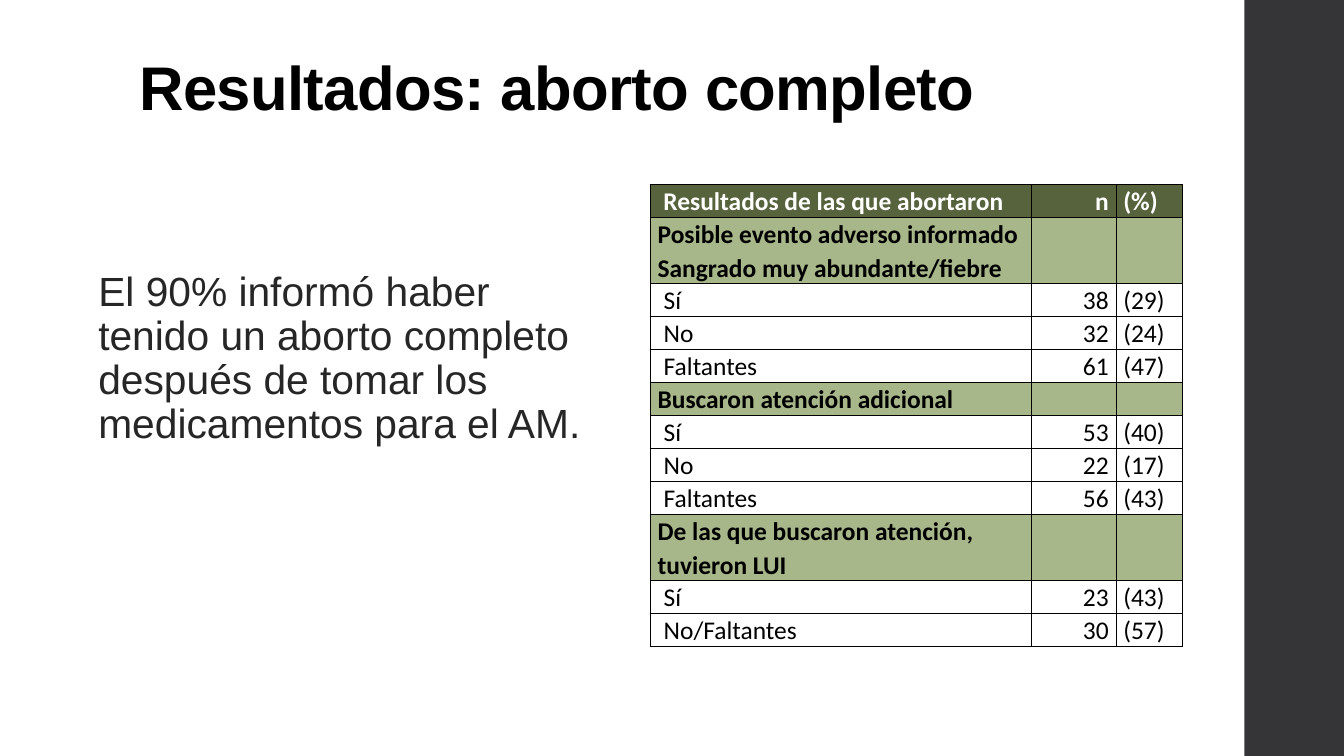
from lxml.etree import SubElement
from pptx import Presentation
from pptx.dml.color import RGBColor
from pptx.enum.shapes import MSO_SHAPE
from pptx.enum.text import MSO_ANCHOR, PP_ALIGN
from pptx.oxml.ns import qn
from pptx.util import Inches, Pt

WHITE = RGBColor(0xFF, 0xFF, 0xFF)
BLACK = RGBColor(0, 0, 0)
INK = RGBColor(0x26, 0x26, 0x26)
DARK = RGBColor(0x35, 0x35, 0x37)
OLIVE = RGBColor(0x56, 0x63, 0x3D)
SAGE = RGBColor(0xA7, 0xB7, 0x89)

TITLE = {"name": "Arial", "size": Pt(72.6), "bold": True}
BODY = {"name": "Arial", "size": Pt(48), "bold": False}
HEAD = {"name": "Calibri", "size": Pt(30), "bold": True}
CELL = {**HEAD, "bold": False}

# Rows with one entry are group headings
ROWS = [
    (" Resultados de las que abortaron", "n", "(%)"),
    ("Posible evento adverso informado Sangrado muy abundante/fiebre",),
    ("Sí", "38", "(29)"),
    ("No", "32", "(24)"),
    ("Faltantes", "61", "(47)"),
    ("Buscaron atención adicional",),
    ("Sí", "53", "(40)"),
    ("No", "22", "(17)"),
    ("Faltantes", "56", "(43)"),
    ("De las que buscaron atención, tuvieron LUI",),
    ("Sí", "23", "(43)"),
    ("No/Faltantes", "30", "(57)"),
]
WIDTHS = (6.24, 1.38, 1.08)
TALL = (1, 9)
LINE = 0.54


class Deck:
    def __init__(self, wide, high):
        self.show = Presentation()
        self.show.slide_width = Inches(wide)
        self.show.slide_height = Inches(high)
        self.slide = self.show.slides.add_slide(self.show.slide_layouts[6])

    def put(self, frame, text, style, color, lead, align=PP_ALIGN.LEFT, indent=0):
        para = frame.paragraphs[0]
        para.alignment = align
        para.line_spacing = lead
        if indent:
            props = para._p.get_or_add_pPr()
            props.set("marL", str(Inches(indent)))
            props.set("indent", "0")
        run = para.add_run()
        run.text = text
        for key, value in style.items():
            setattr(run.font, key, value)
        run.font.color.rgb = color
        return run

    def bar(self, box, color):
        shape = self.slide.shapes.add_shape(MSO_SHAPE.RECTANGLE, *map(Inches, box))
        shape.shadow.inherit = False
        shape.fill.solid()
        shape.fill.fore_color.rgb = color
        shape.line.fill.background()

    def text(self, box, text, style, color, anchor=MSO_ANCHOR.TOP, indent=0):
        frame = self.slide.shapes.add_textbox(*map(Inches, box)).text_frame
        frame.word_wrap = True
        frame.vertical_anchor = anchor
        return self.put(frame, text, style, color, 0.9, indent=indent)

    def edge(self, cell):
        props = cell._tc.get_or_add_tcPr()
        for side in ("lnL", "lnR", "lnT", "lnB"):
            line = SubElement(props, qn(f"a:{side}"), w=str(Pt(1)))
            fill = SubElement(line, qn("a:solidFill"))
            SubElement(fill, qn("a:srgbClr"), val=str(BLACK))

    def cell(self, cell, text, style, color, fill, align, indent):
        pads = {"margin_left": 0.12, "margin_right": 0.12,
                "margin_top": 0, "margin_bottom": 0}
        for key, value in pads.items():
            setattr(cell, key, Inches(value))
        self.edge(cell)
        if fill is None:
            cell.fill.background()
        else:
            cell.fill.solid()
            cell.fill.fore_color.rgb = fill
        if text:
            self.put(cell.text_frame, text, style, color, 1.07, align, indent)

    def table(self, left, top, rows):
        high = LINE * (len(rows) + len(TALL))
        grid = self.slide.shapes.add_table(
            len(rows), len(WIDTHS), Inches(left), Inches(top),
            Inches(sum(WIDTHS)), Inches(high)).table
        for col, width in zip(grid.columns, WIDTHS):
            col.width = Inches(width)
        for r, row in enumerate(rows):
            grid.rows[r].height = Inches(LINE * (2 if r in TALL else 1))
            if r == 0:
                style, color, fill = HEAD, WHITE, OLIVE
            elif len(row) == 1:
                style, color, fill = HEAD, BLACK, SAGE
            else:
                style, color, fill = CELL, BLACK, None
            for c in range(len(WIDTHS)):
                text = row[c] if c < len(row) else ""
                align = PP_ALIGN.RIGHT if c == 1 else PP_ALIGN.LEFT
                indent = 0.1 if fill is None and c == 0 else 0
                self.cell(grid.cell(r, c), text, style, color, fill, align, indent)


def main():
    deck = Deck(21.99, 12.37)

    # Side band
    deck.bar((20.36, 0, 1.63, 12.37), DARK)

    # Title and message
    title = deck.text((2.18, 0.63, 17.51, 1.44), "Resultados: aborto completo",
                      TITLE, BLACK, MSO_ANCHOR.BOTTOM)
    title._r.get_or_add_rPr().set("spc", "-80")
    deck.text((1.02, 4.39, 8.86, 4.04),
              "El 90% informó haber tenido un aborto completo después de tomar "
              "los medicamentos para el AM.", BODY, INK, indent=0.49)

    # Results table
    deck.table(10.64, 3.02, ROWS)

    deck.show.save("out.pptx")


if __name__ == "__main__":
    main()
